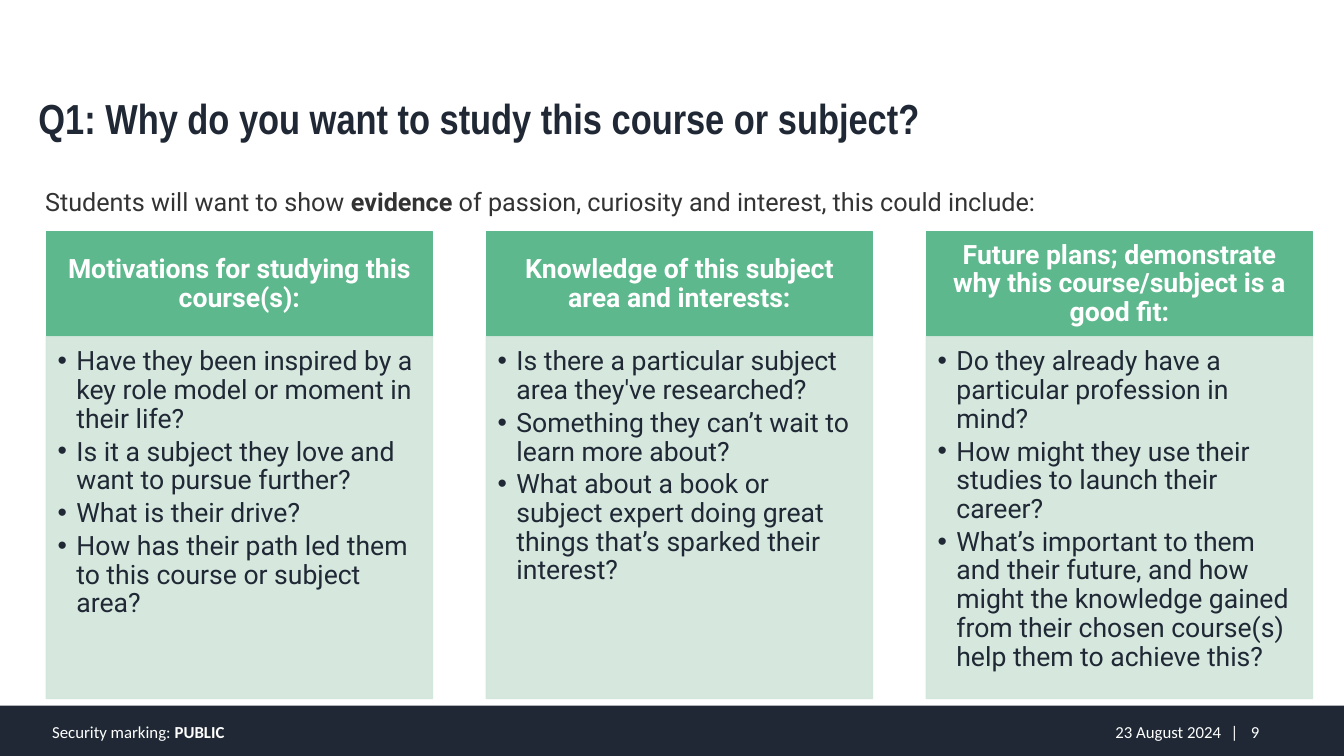
from lxml import etree
from pptx import Presentation
from pptx.dml.color import RGBColor
from pptx.enum.shapes import MSO_SHAPE
from pptx.enum.text import MSO_ANCHOR, MSO_AUTO_SIZE, PP_ALIGN
from pptx.oxml.ns import qn
from pptx.util import Pt

RECTANGLE = MSO_SHAPE.RECTANGLE
TOP, MIDDLE = MSO_ANCHOR.TOP, MSO_ANCHOR.MIDDLE
LEFT, CENTER, RIGHT = PP_ALIGN.LEFT, PP_ALIGN.CENTER, PP_ALIGN.RIGHT

# Content
TITLE = "Q1: Why do you want to study this course or subject?"
INTRO = [("Students will want to show ", False), ("evidence", True),
         (" of passion, curiosity and interest, this could include:", False)]
COLUMNS = [
    ("Motivations for studying this course(s):", [
        "Have they been inspired by a key role model or moment in their life?",
        "Is it a subject they love and want to pursue further?",
        "What is their drive?",
        "How has their path led them to this course or subject area?"]),
    ("Knowledge of this subject area and interests:", [
        "Is there a particular subject area they've researched?",
        "Something they can’t wait to learn more about?",
        "What about a book or subject expert doing great things that’s "
        "sparked their interest?"]),
    ("Future plans; demonstrate why this course/subject is a good fit:", [
        "Do they already have a particular profession in mind?",
        "How might they use their studies to launch their career?",
        "What’s important to them and their future, and how might the knowledge "
        "gained from their chosen course(s) help them to achieve this?"]),
]
MARKING = [("Security marking: ", False), ("PUBLIC", True)]
DATE = "23 August 2024"
PAGE = "|\t9"

# Colours and measures in points
NAVY, GREY, WHITE = "1F2834", "333333", "FFFFFF"
GREEN, PALE_GREEN = "5DB88D", "D2E6DB"
SLIDE_W, SLIDE_H = 960, 540
FOOTER_TOP = 504
COLUMN_LEFT, COLUMN_W, COLUMN_PITCH = 33.1, 275.8, 314.3
HEADING_TOP, HEADING_H, BODY_H = 165.6, 74.9, 258.5
BULLET_INDENT = 13.5
PAGE_TAB = 14.4


def colour(hex_string):
    return RGBColor.from_string(hex_string)


def add_element(parent, tag, **attributes):
    return etree.SubElement(parent, qn(tag), attributes)


def write(shape, paragraphs, *, size, font, color, bold=False, align=LEFT,
          anchor=TOP, insets=(7.2, 3.6, 7.2, 3.6), spacing=None, after=None,
          bullet=False, tab=None):
    """Fill a shape; a paragraph is a string or a list of (text, bold) pairs."""
    frame = shape.text_frame
    frame.word_wrap = True
    frame.auto_size = MSO_AUTO_SIZE.NONE
    frame.vertical_anchor = anchor
    (frame.margin_left, frame.margin_top,
     frame.margin_right, frame.margin_bottom) = map(Pt, insets)
    for i, content in enumerate(paragraphs):
        paragraph = frame.add_paragraph() if i else frame.paragraphs[0]
        paragraph.alignment = align
        if spacing:
            paragraph.line_spacing = spacing
        if after:
            paragraph.space_after = Pt(after)
        properties = paragraph._p.get_or_add_pPr()
        if bullet:
            paragraph.level = 1
            properties.set("marL", str(Pt(BULLET_INDENT)))
            properties.set("indent", str(-Pt(BULLET_INDENT)))
            add_element(properties, "a:buFont", typeface="Arial")
            add_element(properties, "a:buChar", char="•")
        if tab:
            stops = add_element(properties, "a:tabLst")
            add_element(stops, "a:tab", pos=str(Pt(tab)), algn="l")
        runs = [(content, bold)] if isinstance(content, str) else content
        for text, run_bold in runs:
            run = paragraph.add_run()
            run.text = text
            run.font.size, run.font.name, run.font.bold = Pt(size), font, run_bold
            run.font.color.rgb = colour(color)


def add_panel(slide, box, fill, opacity=100, outline=True):
    panel = slide.shapes.add_shape(RECTANGLE, *map(Pt, box))
    panel.shadow.inherit = False
    parts = [panel.fill]
    panel.fill.solid()
    panel.fill.fore_color.rgb = colour(fill)
    if outline:
        panel.line.width = Pt(1)
        panel.line.color.rgb = colour(fill)
    else:
        panel.line.fill.background()
    if opacity < 100:
        for tint in panel._element.spPr.iter(qn("a:srgbClr")):
            add_element(tint, "a:alpha", val=str(opacity * 1000))
    return panel


def add_label(slide, box, content, **style):
    write(slide.shapes.add_textbox(*map(Pt, box)), [content], **style)


def main():
    deck = Presentation()
    deck.slide_width, deck.slide_height = Pt(SLIDE_W), Pt(SLIDE_H)
    slide = deck.slides.add_slide(deck.slide_layouts[5])

    # Footer
    add_panel(slide, (0, FOOTER_TOP, SLIDE_W, SLIDE_H - FOOTER_TOP), NAVY,
              outline=False)
    footer = dict(size=12, font="Calibri", color=WHITE, anchor=MIDDLE)
    add_label(slide, (626.4, 510.5, 246, 24.5), DATE, align=RIGHT,
              insets=(7.2, 3.6, 0, 3.6), **footer)
    add_label(slide, (872, 510.5, 57.6, 23.8), PAGE, tab=PAGE_TAB, **footer)
    add_label(slide, (30.2, 510.5, 471, 23.8), MARKING, **footer)

    # Title and introduction
    title = slide.shapes.title
    title.left, title.top, title.width, title.height = map(
        Pt, (20.2, 62.6, 687, 43.9))
    write(title, [TITLE], size=30, font="Arial Narrow", color=NAVY, bold=True)
    add_label(slide, (25.2, 129.6, 919.4, 28.8), INTRO,
              size=18, font="Roboto", color=GREY)

    # Question columns
    for i, (heading, questions) in enumerate(COLUMNS):
        left = COLUMN_LEFT + i * COLUMN_PITCH
        header = add_panel(slide, (left, HEADING_TOP, COLUMN_W, HEADING_H), GREEN)
        write(header, [heading], size=19, font="Roboto", color=WHITE, bold=True,
              align=CENTER, anchor=MIDDLE, insets=(10.8, 5.8, 10.8, 5.8),
              spacing=0.9)
        body = add_panel(slide, (left, HEADING_TOP + HEADING_H, COLUMN_W, BODY_H),
                         PALE_GREEN, opacity=90)
        write(body, questions, size=19, font="Roboto", color=NAVY,
              insets=(8, 8, 10.8, 12), spacing=0.9, after=2.85, bullet=True)

    deck.save("out.pptx")


if __name__ == "__main__":
    main()
